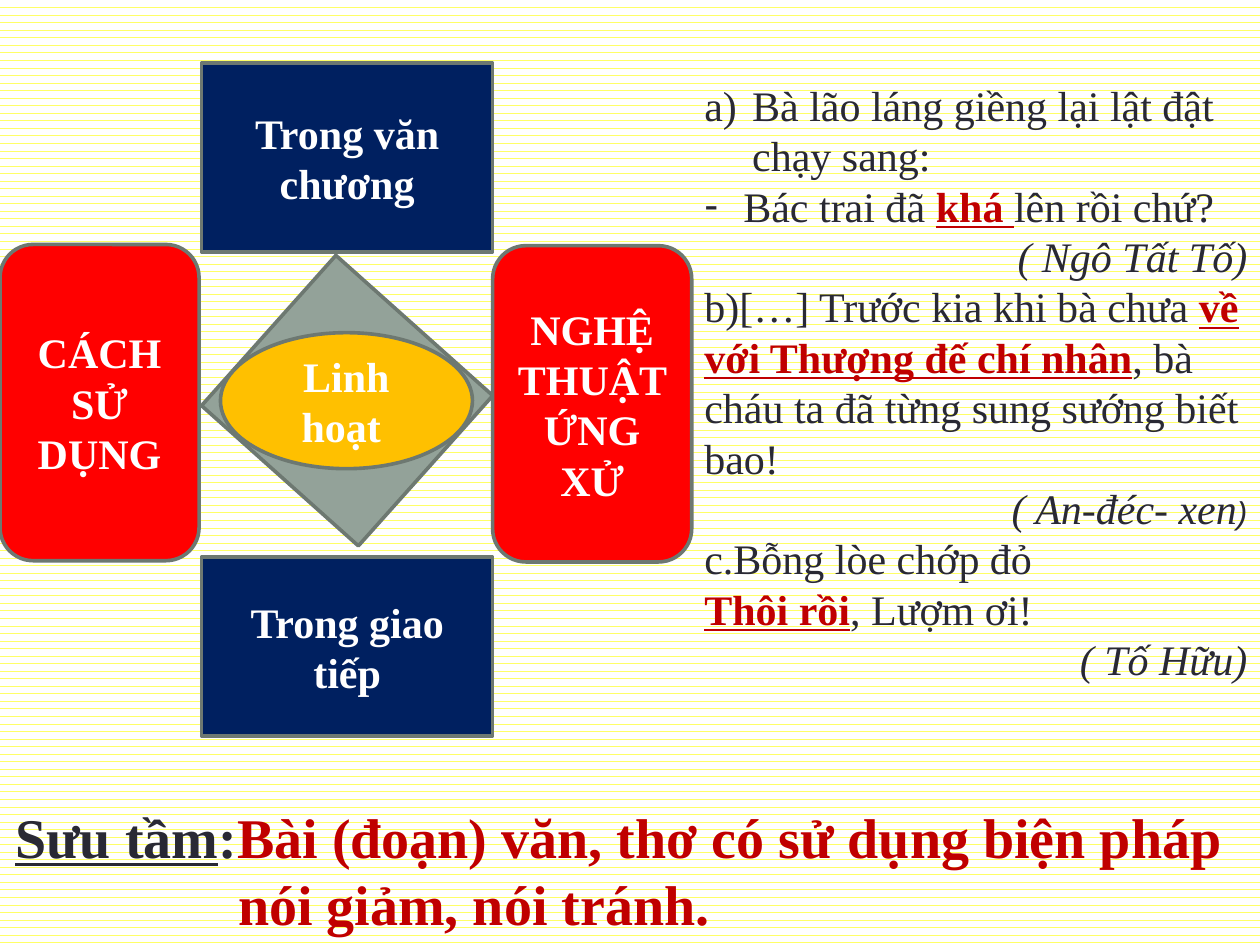
from pptx import Presentation
from pptx.dml.color import RGBColor
from pptx.enum.dml import MSO_PATTERN
from pptx.enum.shapes import MSO_SHAPE
from pptx.enum.text import MSO_ANCHOR, MSO_AUTO_SIZE, PP_ALIGN
from pptx.oxml.ns import qn
from pptx.util import Inches, Pt
from lxml.etree import SubElement

COLORS = {
    "ink": "292934", "accent": "C00000", "white": "FFFFFF", "stripe": "FFFF66",
    "outline": "6D7871", "red": "FF0000", "navy": "002060", "gold": "FFC000",
    "grey": "93A299",
}
KEY = dict(color="accent", bold=True, underline=True)
SOURCE = dict(italic=True)


def color(name):
    return RGBColor.from_string(COLORS[name])


def add_run(paragraph, text, size=24, name="Times New Roman", color_name="ink",
            bold=False, italic=False, underline=False):
    run = paragraph.add_run()
    run.text = text
    font = run.font
    font.size, font.name = Pt(size), name
    font.bold, font.italic, font.underline = bold, italic, underline
    font.color.rgb = color(color_name)


def write(paragraph, runs, align=PP_ALIGN.LEFT, hanging=0, bullet=("buNone", {}), **style):
    """Fill a paragraph with (text, format) runs; each format overrides the style."""
    paragraph.alignment = align
    paragraph.space_before = Pt(0)
    properties = paragraph._p.get_or_add_pPr()
    properties.set("marL", str(Inches(hanging)))
    properties.set("indent", str(-Inches(hanging)))
    tag, attributes = bullet
    SubElement(properties, qn("a:" + tag), attributes)
    for text, run_format in runs:
        run_format = {**style, **run_format}
        color_name = run_format.pop("color", "ink")
        add_run(paragraph, text, color_name=color_name, **run_format)


class SlideBuilder:
    line_width = Pt(2.08)

    def __init__(self, presentation):
        self.slide = presentation.slides.add_slide(presentation.slide_layouts[1])

    def background(self):
        fill = self.slide.background.fill
        fill.patterned()
        fill.pattern = MSO_PATTERN.DASHED_HORIZONTAL
        fill.fore_color.rgb = color("stripe")
        fill.back_color.rgb = color("white")

    def block(self, kind, fill, left, top, width, height, text="", rotation=0):
        shape = self.slide.shapes.add_shape(
            kind, Inches(left), Inches(top), Inches(width), Inches(height))
        shape.shadow.inherit = False
        shape.rotation = rotation
        shape.fill.solid()
        shape.fill.fore_color.rgb = color(fill)
        shape.line.color.rgb = color(self_outline := "outline")
        shape.line.width = self.line_width
        if text:
            shape.text_frame.word_wrap = True
            shape.text_frame.vertical_anchor = MSO_ANCHOR.MIDDLE
            write(shape.text_frame.paragraphs[0], [(text, {})],
                  align=PP_ALIGN.CENTER, color="white", bold=True)

    def placeholder(self, shape, left, top, width, height, paragraphs):
        shape.left, shape.top = Inches(left), Inches(top)
        shape.width, shape.height = Inches(width), Inches(height)
        frame = shape.text_frame
        frame.word_wrap = True
        frame.auto_size = MSO_AUTO_SIZE.NONE
        frame.vertical_anchor = MSO_ANCHOR.TOP
        for index, (runs, options) in enumerate(paragraphs):
            paragraph = frame.add_paragraph() if index else frame.paragraphs[0]
            write(paragraph, runs, **options)


def main():
    presentation = Presentation()
    presentation.slide_width, presentation.slide_height = Inches(10), Inches(7.5)
    builder = SlideBuilder(presentation)
    builder.background()

    # Diagram: two side panels, two contexts, and the hub between them
    panel, box = MSO_SHAPE.ROUNDED_RECTANGLE, MSO_SHAPE.RECTANGLE
    builder.block(panel, "red", 0, 1.94, 1.58, 2.51, "CÁCH SỬ DỤNG")
    builder.block(box, "navy", 1.6, 4.42, 2.31, 1.42, "Trong giao tiếp")
    builder.block(box, "navy", 1.6, 0.5, 2.31, 1.5, "Trong văn chương")
    builder.block(box, "grey", 1.92, 2.38, 1.67, 1.6, rotation=41.8)
    builder.block(MSO_SHAPE.OVAL, "gold", 1.75, 2.64, 2, 1.08, "Linh hoạt ")
    builder.block(panel, "red", 3.91, 1.95, 1.58, 2.51, "NGHỆ THUẬT ỨNG XỬ")

    # Quoted examples, each followed by its author
    author = dict(align=PP_ALIGN.RIGHT, **SOURCE)
    lettered = dict(hanging=0.38, bullet=("buAutoNum", {"type": "alphaLcParenR"}))
    dashed = dict(hanging=0.31, bullet=("buChar", {"char": "-"}))
    examples = [
        ([("Bà lão láng giềng lại lật đật chạy sang:", {})], lettered),
        ([("Bác trai đã ", {}), ("khá ", KEY), ("lên rồi chứ?", {})], dashed),
        ([("( Ngô Tất Tố)", {})], author),
        ([("b)[…] Trước kia khi bà chưa ", {}),
          ("về với Thượng đế chí nhân", KEY),
          (", bà cháu ta đã từng sung sướng biết bao!", {})], {}),
        ([("( An-đéc- xen", {}), (")", dict(size=18, name="Arial"))], author),
        ([("c.Bỗng lòe chớp đỏ", {})], {}),
        ([("Thôi rồi", KEY), (", Lượm ơi!", {})], {}),
        ([("( Tố Hữu)", {})], author),
    ]
    builder.placeholder(builder.slide.placeholders[1], 5.49, 0.58, 4.51, 4.95, examples)

    # Task line, its second line hanging under the task itself
    task = [("Sưu tầm", dict(underline=True)), (":", {}),
            ("Bài (đoạn) văn, thơ có sử dụng biện pháp nói giảm, nói tránh.",
             dict(color="accent"))]
    builder.placeholder(builder.slide.shapes.title, 0.02, 6.32, 10, 1.18,
                        [(task, dict(hanging=1.77, size=32, bold=True))])

    presentation.save("out.pptx")


if __name__ == "__main__":
    main()
